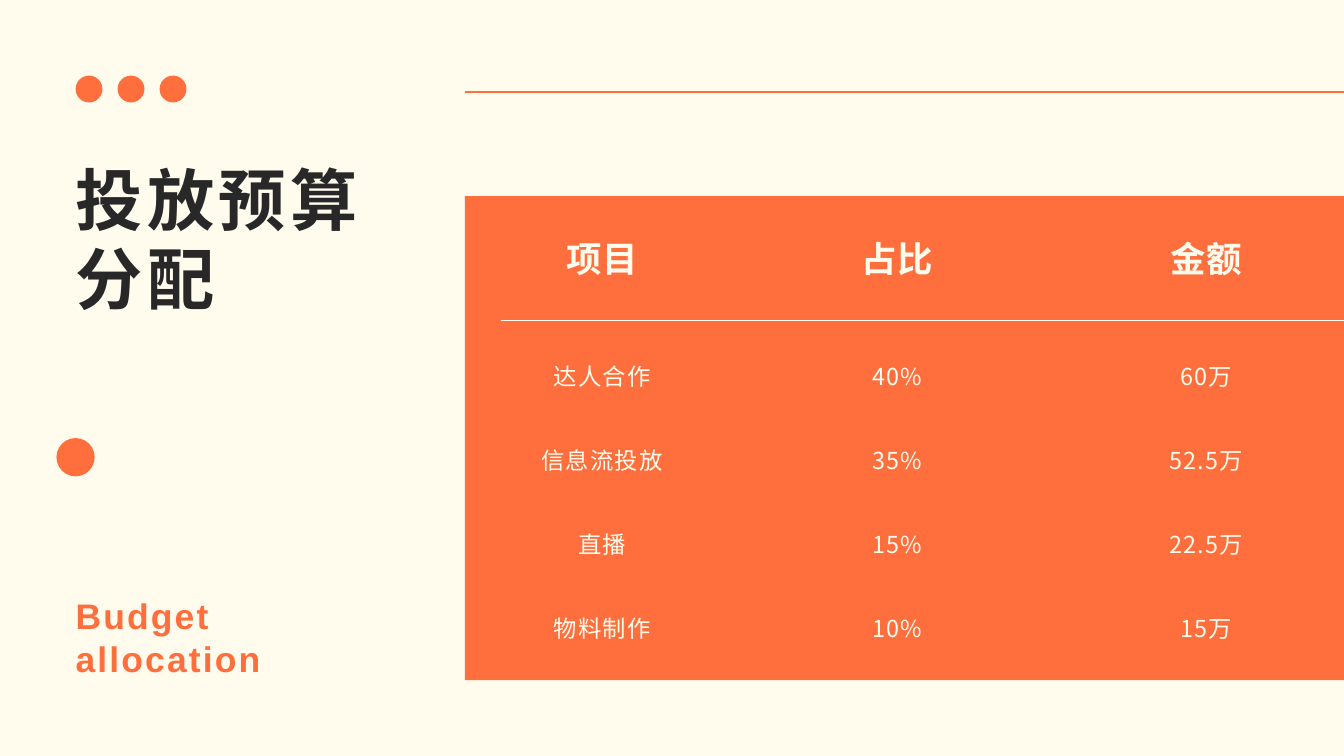
from pptx import Presentation
from pptx.dml.color import RGBColor
from pptx.enum.shapes import MSO_CONNECTOR, MSO_SHAPE
from pptx.enum.text import MSO_ANCHOR, MSO_AUTO_SIZE, PP_ALIGN
from pptx.oxml.ns import qn
from pptx.oxml.xmlchemy import OxmlElement
from pptx.util import Pt

TITLE = "投放预算分配"
SUBTITLE = "Budget allocation"
BUDGET = [
    ("项目", "占比", "金额"),
    ("达人合作", "40%", "60万"),
    ("信息流投放", "35%", "52.5万"),
    ("直播", "15%", "22.5万"),
    ("物料制作", "10%", "15万"),
]

CREAM, ORANGE, INK = "FFFBED", "FF6F3D", "282828"
CJK, LATIN = "Noto Sans CJK SC", "Arial"
NO_GRID_STYLE = "{2D5ABB26-0587-4C30-8999-92F81FD0307C}"

SLIDE_W, SLIDE_H = 1440, 810
MARGIN = 81
PANEL_X, PANEL_Y, PANEL_H = 498.2, 210.2, 518.6
COLUMN_WIDTHS = (293.8, 338.4, 309.6)
HEADER_H, ROW_H, HEADER_GAP = 145.8, 90, 12.6
LAST_COLUMN_SHIFT = 14.4


def paint(fill, color):
    fill.solid()
    fill.fore_color.rgb = RGBColor.from_string(color)


def write(frame, text, size, color, font, leading, spacing, bold=False, align=PP_ALIGN.LEFT):
    frame.text = text
    frame.word_wrap = True
    paragraph = frame.paragraphs[0]
    paragraph.alignment = align
    paragraph.line_spacing = Pt(leading)
    run = paragraph.runs[0]
    run.font.size, run.font.bold, run.font.name = Pt(size), bold, font
    paint(run.font.fill, color)
    properties = run.font._element if hasattr(run.font, "_element") else run._r.get_or_add_rPr()
    properties.set("spc", str(round(spacing * 100)))
    east_asian = OxmlElement("a:ea")
    east_asian.set("typeface", font)
    properties.append(east_asian)


def clear_insets(frame):
    frame.margin_left = frame.margin_top = frame.margin_right = frame.margin_bottom = 0
    frame.vertical_anchor = MSO_ANCHOR.TOP
    frame.auto_size = MSO_AUTO_SIZE.NONE


def add_block(slide, kind, x, y, width, height):
    block = slide.shapes.add_shape(kind, Pt(x), Pt(y), Pt(width), Pt(height))
    block.shadow.inherit = False
    paint(block.fill, ORANGE)
    block.line.fill.background()


def add_rule(slide, x, y, color):
    rule = slide.shapes.add_connector(MSO_CONNECTOR.STRAIGHT, Pt(x), Pt(y), Pt(SLIDE_W), Pt(y))
    paint(rule.line.fill, color)
    rule.line.width = Pt(1.5)
    rule.element.spPr.append(OxmlElement("a:effectLst"))


def add_budget(slide):
    height = HEADER_H + ROW_H * (len(BUDGET) - 1)
    holder = slide.shapes.add_table(len(BUDGET), len(COLUMN_WIDTHS), Pt(PANEL_X), Pt(PANEL_Y),
                                    Pt(sum(COLUMN_WIDTHS)), Pt(height))
    next(holder.element.iter(qn("a:tableStyleId"))).text = NO_GRID_STYLE
    budget = holder.table
    budget.horz_banding = False
    for column, width in zip(budget.columns, COLUMN_WIDTHS):
        column.width = Pt(width)
    for r, values in enumerate(BUDGET):
        header = r == 0
        budget.rows[r].height = Pt(HEADER_H if header else ROW_H)
        for c, value in enumerate(values):
            cell = budget.cell(r, c)
            cell.fill.background()
            cell.vertical_anchor = MSO_ANCHOR.MIDDLE
            cell.margin_top = cell.margin_right = 0
            cell.margin_left = Pt(LAST_COLUMN_SHIFT if c == len(values) - 1 else 0)
            cell.margin_bottom = Pt(HEADER_GAP if header else 0)
            size, leading, spacing = (38, 53.2, 0.9) if header else (25, 37.5, 1.3)
            write(cell.text_frame, value, size, CREAM, CJK, leading, spacing, header, PP_ALIGN.CENTER)


def main():
    deck = Presentation()
    deck.slide_width, deck.slide_height = Pt(SLIDE_W), Pt(SLIDE_H)
    slide = deck.slides.add_slide(deck.slide_layouts[5])
    paint(slide.background.fill, CREAM)

    title = slide.shapes.title
    title.left, title.top, title.width, title.height = Pt(MARGIN), Pt(170.6), Pt(372), Pt(170)
    clear_insets(title.text_frame)
    write(title.text_frame, TITLE, 72, INK, CJK, 85, 4.8, True)

    add_block(slide, MSO_SHAPE.RECTANGLE, PANEL_X, PANEL_Y, SLIDE_W - PANEL_X, PANEL_H)
    add_budget(slide)

    for i in range(3):
        add_block(slide, MSO_SHAPE.OVAL, MARGIN + 45 * i, 81, 28.8, 28.8)
    add_block(slide, MSO_SHAPE.OVAL, 60.5, 469.4, 41, 41)
    add_rule(slide, PANEL_X, 98.6, ORANGE)
    add_rule(slide, 536.4, PANEL_Y + HEADER_H - HEADER_GAP, CREAM)

    subtitle = slide.shapes.add_textbox(Pt(MARGIN), Pt(636.5), Pt(309), Pt(92)).text_frame
    clear_insets(subtitle)
    write(subtitle, SUBTITLE, 38, ORANGE, LATIN, 46, 2.3, True)

    deck.save("out.pptx")


if __name__ == "__main__":
    main()
